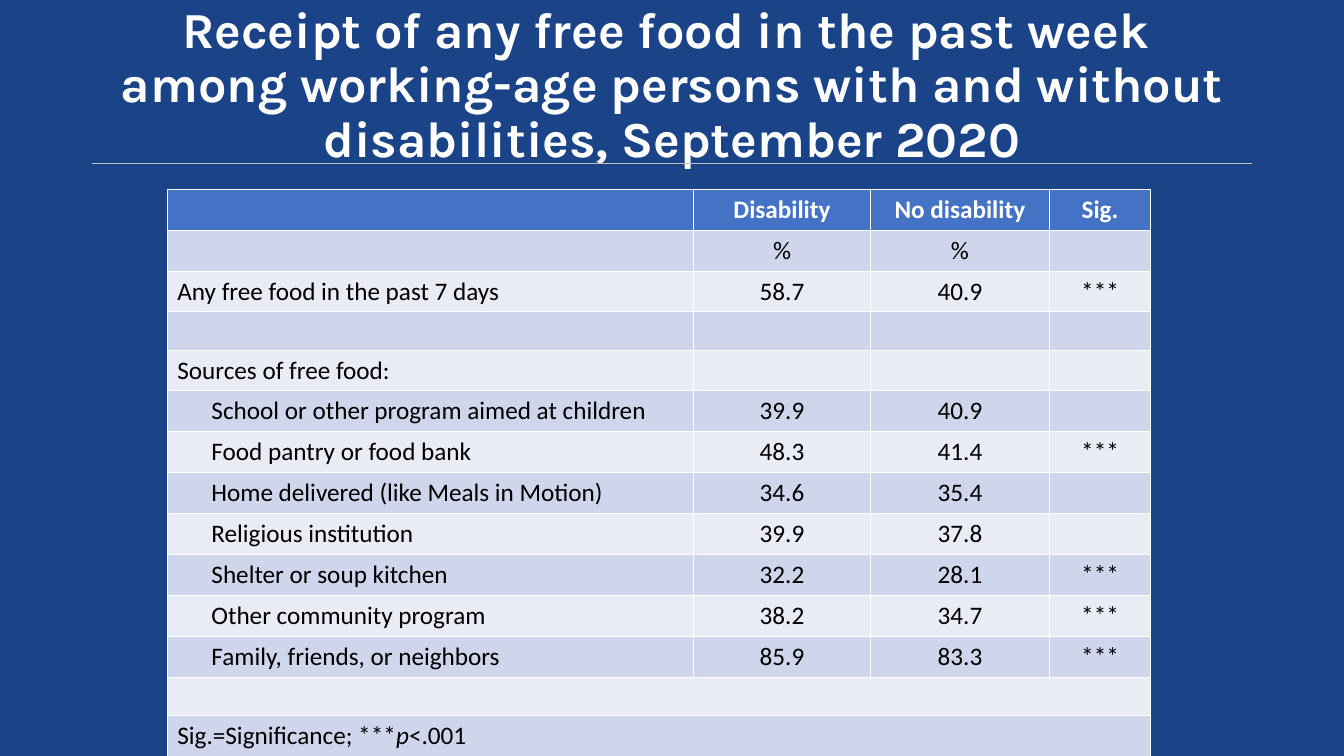
from dataclasses import dataclass

import lxml.etree
import pptx
import pptx.dml.color
import pptx.enum.shapes
import pptx.enum.text
import pptx.oxml
import pptx.oxml.ns
import pptx.util

Cm = pptx.util.Cm
Pt = pptx.util.Pt
RGBColor = pptx.dml.color.RGBColor
Align = pptx.enum.text.PP_ALIGN

NAVY = RGBColor(0x1B, 0x43, 0x88)
BLUE = RGBColor(0x44, 0x72, 0xC4)
BAND_DARK = RGBColor(0xCF, 0xD5, 0xEA)
BAND_LIGHT = RGBColor(0xE9, 0xEB, 0xF5)
GREY = RGBColor(0xBF, 0xBF, 0xBF)
WHITE = RGBColor(0xFF, 0xFF, 0xFF)
BLACK = RGBColor(0x00, 0x00, 0x00)

TITLE_LINES = (
    "Receipt of any free food in the past week ",
    "among working-age persons with and without disabilities, September 2020",
)
COLUMN_WIDTHS = (13.26, 4.46, 4.51, 2.55)
TEXT_ROW_HEIGHT = 1.02
BLANK_ROW_HEIGHT = 0.96
CELL_MARGIN = 0.25
SOURCE_INDENT = 0.86


@dataclass(frozen=True)
class FoodRow:
    label: str = ""
    disability: str = ""
    no_disability: str = ""
    significance: str = ""
    indented: bool = False
    merged: bool = False

    def texts(self) -> tuple[str, ...]:
        return self.label, self.disability, self.no_disability, self.significance


FOOD_ROWS = (
    FoodRow("", "Disability", "No disability", "Sig."),
    FoodRow("", "%", "%"),
    FoodRow("Any free food in the past 7 days", "58.7", "40.9", "***"),
    FoodRow(),
    FoodRow("Sources of free food:"),
    FoodRow("School or other program aimed at children", "39.9", "40.9", indented=True),
    FoodRow("Food pantry or food bank", "48.3", "41.4", "***", indented=True),
    FoodRow("Home delivered (like Meals in Motion)", "34.6", "35.4", indented=True),
    FoodRow("Religious institution", "39.9", "37.8", indented=True),
    FoodRow("Shelter or soup kitchen", "32.2", "28.1", "***", indented=True),
    FoodRow("Other community program", "38.2", "34.7", "***", indented=True),
    FoodRow("Family, friends, or neighbors", "85.9", "83.3", "***", indented=True),
    FoodRow(merged=True),
    FoodRow("Sig.=Significance; ***|p|<.001", merged=True),
)


def write_text(paragraph, text: str, *, size: float = 18, font: str = "Calibri",
               color: RGBColor = BLACK, bold: bool = False,
               align: Align = Align.LEFT) -> None:
    paragraph.alignment = align
    for index, part in enumerate(text.split("|")):
        span = paragraph.add_run()
        span.text = part
        span.font.size = Pt(size)
        span.font.name = font
        span.font.color.rgb = color
        span.font.bold = bold
        span.font.italic = index % 2 == 1


def add_borders(cell) -> None:
    properties = cell._tc.get_or_add_tcPr()
    for side in ("lnL", "lnR", "lnT", "lnB"):
        properties.append(pptx.oxml.parse_xml(
            f'<a:{side} {pptx.oxml.ns.nsdecls("a")} w="{Pt(0.75)}">'
            f'<a:solidFill><a:srgbClr val="{WHITE}"/></a:solidFill></a:{side}>'))


def add_title(page) -> None:
    title = page.shapes.title
    title.left, title.top, title.width, title.height = Cm(2.33), Cm(1.93), Cm(29.21), Cm(2.44)
    frame = title.text_frame
    frame.word_wrap = True
    frame.auto_size = pptx.enum.text.MSO_AUTO_SIZE.NONE
    frame.vertical_anchor = pptx.enum.text.MSO_ANCHOR.BOTTOM
    paragraph = frame.paragraphs[0]
    paragraph.line_spacing = 0.9
    for index, line in enumerate(TITLE_LINES):
        if index:
            paragraph.add_line_break()
        write_text(paragraph, line, size=36, font="Karla", color=WHITE,
                   bold=True, align=Align.CENTER)


def add_rule(page) -> None:
    rule = page.shapes.add_connector(
        pptx.enum.shapes.MSO_CONNECTOR.STRAIGHT, Cm(2.33), Cm(4.12), Cm(31.54), Cm(4.12))
    rule.line.color.rgb = GREY
    rule.line.width = Pt(1)
    lxml.etree.SubElement(rule._element.spPr, pptx.oxml.ns.qn("a:effectLst"))


def fill_row(table, index: int, food_row: FoodRow) -> None:
    header = index == 0
    band = BLUE if header else BAND_DARK if index % 2 else BAND_LIGHT
    filled = any(food_row.texts())
    table.rows[index].height = Cm(TEXT_ROW_HEIGHT if filled else BLANK_ROW_HEIGHT)
    for column, text in enumerate(food_row.texts()):
        cell = table.cell(index, column)
        add_borders(cell)
        cell.fill.solid()
        cell.fill.fore_color.rgb = band
        if text:
            indent = SOURCE_INDENT if food_row.indented and column == 0 else 0
            cell.margin_left = Cm(CELL_MARGIN + indent)
            write_text(cell.text_frame.paragraphs[0], text, bold=header,
                       color=WHITE if header else BLACK,
                       align=Align.CENTER if column else Align.LEFT)
        else:
            cell.margin_top = cell.margin_bottom = 0
    if food_row.merged:
        table.cell(index, 0).merge(table.cell(index, len(COLUMN_WIDTHS) - 1))


def add_food_table(page) -> None:
    table = page.shapes.add_table(
        len(FOOD_ROWS), len(COLUMN_WIDTHS), Cm(4.22), Cm(4.77),
        Cm(sum(COLUMN_WIDTHS)), Cm(TEXT_ROW_HEIGHT * len(FOOD_ROWS))).table
    table.first_row = False
    table.horz_banding = False
    for column, width in zip(table.columns, COLUMN_WIDTHS):
        column.width = Cm(width)
    for index, food_row in enumerate(FOOD_ROWS):
        fill_row(table, index, food_row)


def main() -> None:
    deck = pptx.Presentation()
    deck.slide_width, deck.slide_height = Cm(33.87), Cm(19.05)
    page = deck.slides.add_slide(deck.slide_layouts[5])
    page.background.fill.solid()
    page.background.fill.fore_color.rgb = NAVY
    add_rule(page)
    add_title(page)
    add_food_table(page)
    deck.save("out.pptx")


if __name__ == "__main__":
    main()
